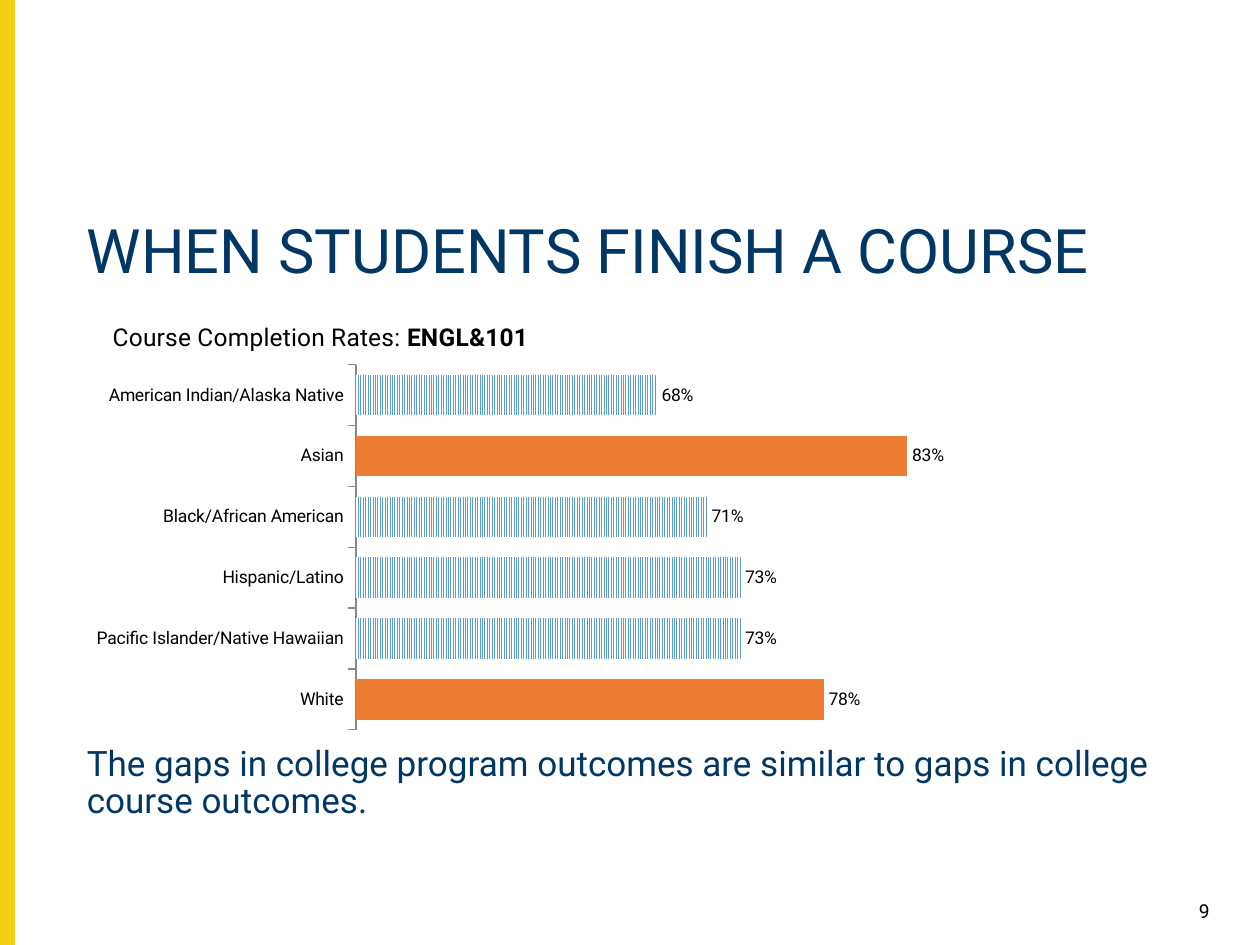
import pptx
import pptx.chart.data
import pptx.dml.color
import pptx.enum.chart
import pptx.enum.dml
import pptx.enum.shapes
import pptx.enum.text
import pptx.oxml
import pptx.util
from pptx.util import Inches

FONT = "Roboto"
NAVY, YELLOW, BLACK, WHITE = "003764", "F4CE12", "000000", "FFFFFF"
BLUE, ORANGE, GRAY = "5B9BD5", "ED7D31", "878787"
LEFT, WIDTH = 0.59, 9.12
COMPLETION_RATES = {
    "American Indian/Alaska Native": 0.68,
    "Asian": 0.83,
    "Black/African American": 0.71,
    "Hispanic/Latino": 0.73,
    "Pacific Islander/Native Hawaiian": 0.73,
    "White": 0.78,
}
HIGHLIGHTED = ("Asian", "White")


def color(hex_code):
    return pptx.dml.color.RGBColor.from_string(hex_code)


def style_font(font, size, hex_code=BLACK, bold=False):
    font.name, font.size, font.bold = FONT, pptx.util.Pt(size), bold
    font.color.rgb = color(hex_code)


def write(frame, text, size, hex_code=BLACK, bold=False, align=None, spacing=None):
    paragraph = frame.paragraphs[-1]
    if align is not None:
        paragraph.alignment = align
    if spacing is not None:
        paragraph.line_spacing = spacing
    run = paragraph.add_run()
    run.text = text
    style_font(run.font, size, hex_code, bold)


def place(parent, index, target=None, **fractions):
    for old in parent.xpath("c:layout"):
        parent.remove(old)
    inner = f'<c:layoutTarget val="{target}"/>' if target else ""
    inner += "".join(f'<c:{axis}Mode val="edge"/>' for axis in "xy")
    inner += "".join(f'<c:{key} val="{value}"/>' for key, value in fractions.items())
    namespace = pptx.oxml.ns.nsdecls("c")
    layout = f"<c:layout {namespace}><c:manualLayout>{inner}</c:manualLayout></c:layout>"
    parent.insert(index, pptx.oxml.parse_xml(layout))


class CourseSlide:
    """Holds the slide and draws each kind of element in its style."""

    def __init__(self, presentation):
        self.slide = presentation.slides.add_slide(presentation.slide_layouts[6])

    def band(self, left, top, width, height, hex_code):
        band = self.slide.shapes.add_shape(
            pptx.enum.shapes.MSO_SHAPE.RECTANGLE,
            Inches(left), Inches(top), Inches(width), Inches(height))
        band.shadow.inherit = False
        band.fill.solid()
        band.fill.fore_color.rgb = color(hex_code)
        band.line.color.rgb = color(hex_code)
        band.line.width = pptx.util.Pt(1)

    def text(self, left, top, width, height, words, size, **style):
        frame = self.slide.shapes.add_textbox(
            Inches(left), Inches(top), Inches(width), Inches(height)).text_frame
        frame.word_wrap = True
        write(frame, words, size, **style)

    def bar_chart(self, left, top, width, height, rates, highlighted):
        data = pptx.chart.data.CategoryChartData(number_format="0%")
        data.categories = list(rates)
        data.add_series("Series 1", list(rates.values()))
        chart = self.slide.shapes.add_chart(
            pptx.enum.chart.XL_CHART_TYPE.BAR_CLUSTERED,
            Inches(left), Inches(top), Inches(width), Inches(height), data).chart
        chart.has_legend = False
        style_font(chart.font, 10)
        self.chart_title(chart)
        self.axes(chart)
        self.bars(chart.plots[0], rates, highlighted)
        place(chart._chartSpace.xpath("c:chart/c:plotArea")[0], 0, "inner",
              x=0.245, y=0.15, w=0.727, h=0.828)

    def chart_title(self, chart):
        chart.has_title = True
        title = chart.chart_title
        write(title.text_frame, "Course Completion Rates: ", 14)
        write(title.text_frame, "ENGL&101", 14, bold=True)
        title.include_in_layout = False
        place(title._element, 1, x=0.03, y=0.04)

    def axes(self, chart):
        groups, rates = chart.category_axis, chart.value_axis
        groups.reverse_order = True
        groups.major_tick_mark = pptx.enum.chart.XL_TICK_MARK.OUTSIDE
        groups.format.line.color.rgb = color(GRAY)
        style_font(groups.tick_labels.font, 10)
        rates.minimum_scale, rates.maximum_scale = 0.5, 1
        rates.has_major_gridlines = False
        rates.visible = False

    def bars(self, plot, rates, highlighted):
        plot.gap_width = 50
        plot.vary_by_categories = False
        series = plot.series[0]
        series.invert_if_negative = False
        for index, group in enumerate(rates):
            fill = series.points[index].format.fill
            if group in highlighted:
                fill.solid()
            else:
                fill.patterned()
                fill.pattern = pptx.enum.dml.MSO_PATTERN.NARROW_VERTICAL
                fill.back_color.rgb = color(WHITE)
            fill.fore_color.rgb = color(ORANGE if group in highlighted else BLUE)
        labels = series.data_labels
        labels.show_value = True
        labels.number_format, labels.number_format_is_linked = "0%", False
        labels.position = pptx.enum.chart.XL_LABEL_POSITION.OUTSIDE_END
        style_font(labels.font, 10)


def main():
    presentation = pptx.Presentation()
    presentation.slide_width, presentation.slide_height = Inches(10), Inches(7.5)
    course = CourseSlide(presentation)
    course.band(0, 0, 0.11, 7.5, YELLOW)
    course.text(LEFT, 1.7, WIDTH, 0.87, "WHEN STUDENTS FINISH A COURSE", 35,
                hex_code=NAVY, spacing=0.9)
    course.text(9.19, 7.09, 0.51, 0.26, "9", 11,
                align=pptx.enum.text.PP_ALIGN.RIGHT)
    course.bar_chart(LEFT, 2.37, WIDTH, 3.5, COMPLETION_RATES, HIGHLIGHTED)
    course.text(LEFT, 5.87, WIDTH, 1.05,
                "The gaps in college program outcomes are similar to gaps in "
                "college course outcomes.", 20, hex_code=NAVY, spacing=0.9)
    presentation.save("out.pptx")


if __name__ == "__main__":
    main()
